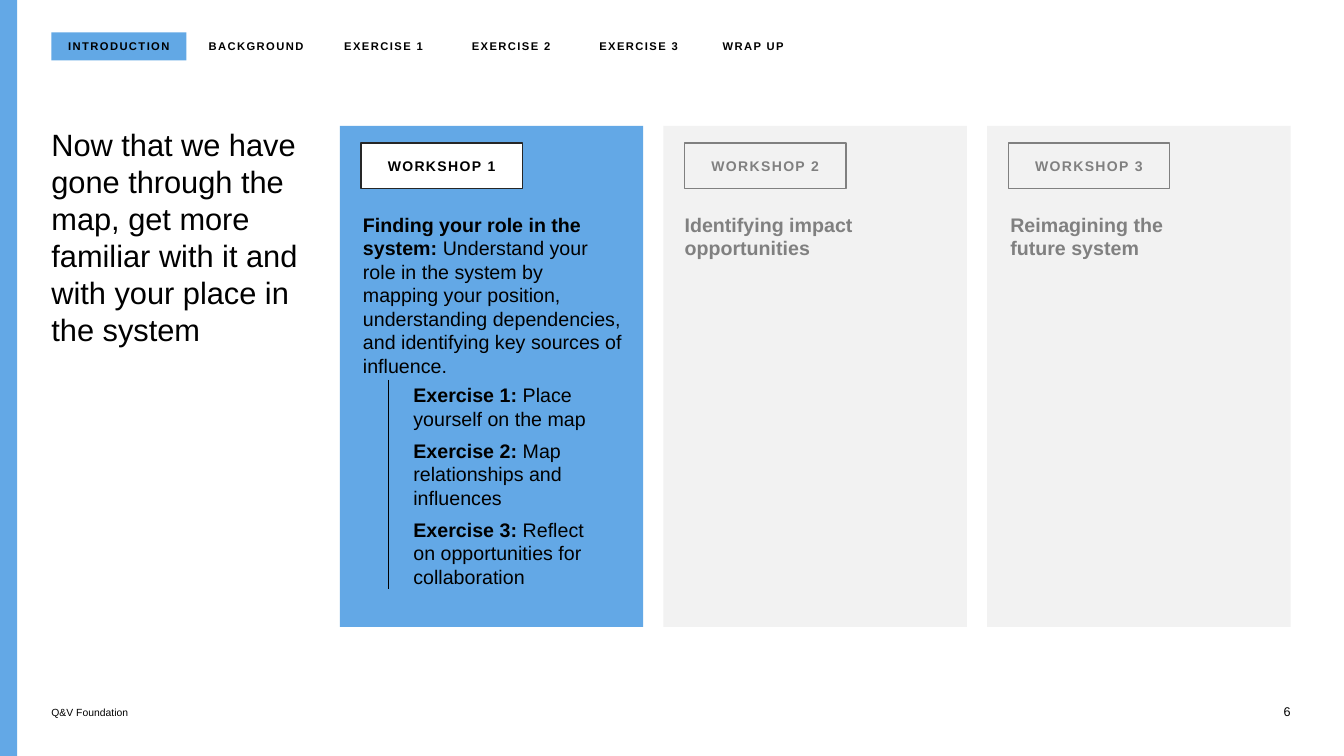
"""Builds the workshop overview slide."""
from dataclasses import dataclass

import lxml.etree
import pptx
import pptx.dml.color
import pptx.enum.shapes
import pptx.enum.text
import pptx.oxml.ns
import pptx.util

PX = 4572
ALIGN = pptx.enum.text.PP_ALIGN
ANCHOR = pptx.enum.text.MSO_ANCHOR
SHAPE = pptx.enum.shapes.MSO_SHAPE
qn = pptx.oxml.ns.qn


@dataclass(frozen=True)
class Theme:
    """Colours and type sizes of the slide."""
    font: str = "Arial"
    blue: str = "63A8E6"
    tab_blue: str = "62A8E5"
    pale: str = "F2F2F2"
    white: str = "FFFFFF"
    black: str = "000000"
    dark: str = "262626"
    grey: str = "808080"
    title: float = 22
    body: float = 14
    badge: float = 10
    page: float = 9
    tab: float = 8
    footer: float = 7.4


THEME = Theme()
TABS = [("INTRODUCTION", 268), ("BACKGROUND", 230), ("EXERCISE 1", 230),
        ("EXERCISE 2", 230), ("EXERCISE 3", 230), ("WRAP UP", 178)]
ROLE = [("Finding your role in the system: ", True),
        ("Understand your role in the system by mapping your position, "
         "understanding dependencies, and identifying key sources of influence.", False)]
WORKSHOPS = [(ROLE, 46, 324),
             ([("Identifying impact opportunities", True)], 42, 154),
             ([("Reimagining the \nfuture system", True)], 46, 154)]
EXERCISES = [[("Exercise 1: ", True), ("Place \nyourself on the map", False)],
             [("Exercise 2: ", True), ("Map relationships and influences", False)],
             [("Exercise 3: ", True),
              ("Reflect \non opportunities for collaboration", False)]]


def px(*lengths):
    """Turn pixel lengths into EMU."""
    return [pptx.util.Emu(length * PX) for length in lengths]


def rgb(code):
    """Return a colour from its hex code."""
    return pptx.dml.color.RGBColor.from_string(code)


def add_run(paragraph, wording, size, color, bold):
    """Add one formatted run, with line breaks where the wording has them."""
    for index, line in enumerate(wording.split("\n")):
        if index:
            paragraph.add_line_break()
        run = paragraph.add_run()
        run.text = line
        run.font.name = THEME.font
        run.font.size = pptx.util.Pt(size)
        run.font.bold = bold
        run.font.color.rgb = rgb(color)


def write(holder, paragraphs, size, color, align=ALIGN.LEFT, anchor=ANCHOR.TOP, gap=0):
    """Fill a shape with paragraphs made of (wording, bold) runs."""
    frame = holder.text_frame
    frame.word_wrap = True
    frame.auto_size = pptx.enum.text.MSO_AUTO_SIZE.NONE
    frame.vertical_anchor = anchor
    frame.margin_left = frame.margin_right = 0
    frame.margin_top = frame.margin_bottom = 0
    for index, runs in enumerate(paragraphs):
        paragraph = frame.add_paragraph() if index else frame.paragraphs[0]
        paragraph.alignment = align
        paragraph.line_spacing = 1.0
        paragraph.space_before = pptx.util.Pt(gap if index else 0)
        for wording, bold in runs:
            add_run(paragraph, wording, size, color, bold)


def place(holder, left, top, width, height):
    """Move and size a placeholder."""
    holder.left, holder.top, holder.width, holder.height = px(left, top, width, height)


def add_block(slide, box, fill=None, line=None, kind=SHAPE.RECTANGLE):
    """Add a flat block with an optional fill and outline."""
    block = slide.shapes.add_shape(kind, *px(*box))
    block.shadow.inherit = False
    if fill:
        block.fill.solid()
        block.fill.fore_color.rgb = rgb(fill)
    else:
        block.fill.background()
    if line:
        block.line.color.rgb = rgb(line)
        block.line.width = pptx.util.Pt(1)
    else:
        block.line.fill.background()
    return block


def add_label(block, wording, size, color):
    """Write a centred, letter-spaced label on a block."""
    write(block, [[(wording, True)]], size, color, ALIGN.CENTER, ANCHOR.MIDDLE)
    for properties in block.element.iter(qn("a:rPr")):
        properties.set("spc", "100")


def add_text(slide, box, runs, size, color, **layout):
    """Add a one-paragraph text box."""
    write(slide.shapes.add_textbox(*px(*box)), [runs], size, color, **layout)


def add_tabs(slide):
    """Add the row of section tabs, the first one active."""
    left = 102
    for index, (section, width) in enumerate(TABS):
        fill = THEME.white if index else THEME.tab_blue
        tab = add_block(slide, (left, 64, width, 56), fill)
        add_label(tab, section, THEME.tab, THEME.black)
        left += width + 23


def add_workshops(slide):
    """Add the three workshop cards, the first one active."""
    for index, (runs, inset, height) in enumerate(WORKSHOPS):
        active = index == 0
        left = 674 + 642 * index
        color = THEME.black if active else THEME.grey
        add_block(slide, (left, 250, 602, 994), THEME.blue if active else THEME.pale)
        badge = add_block(slide, (left + 42, 284, 320, 90),
                          THEME.white if active else None,
                          THEME.dark if active else THEME.grey,
                          SHAPE.ROUNDED_RECTANGLE)
        badge.adjustments[0] = 0
        add_label(badge, f"WORKSHOP {index + 1}", THEME.badge, color)
        add_text(slide, (left + inset, 422, 516, height), runs, THEME.body, color)


def add_exercises(slide, exercises):
    """Set the exercise list in front of its card, with a rule beside it."""
    place(exercises, 820, 760, 392, 414)
    exercises.element.getparent().append(exercises.element)
    write(exercises, EXERCISES, THEME.body, THEME.black, gap=6)
    for properties in exercises.element.iter(qn("a:pPr")):
        properties.set("marL", "0")
        properties.set("indent", "0")
        lxml.etree.SubElement(properties, qn("a:buNone"))
    rule = slide.shapes.add_connector(
        pptx.enum.shapes.MSO_CONNECTOR.STRAIGHT, *px(770, 754, 770, 1168))
    rule.line.color.rgb = rgb(THEME.black)
    rule.line.width = pptx.util.Pt(0.75)
    lxml.etree.SubElement(rule.element.spPr, qn("a:effectLst"))


def main():
    """Build and save the slide."""
    deck = pptx.Presentation()
    deck.slide_width, deck.slide_height = px(2666, 1500)
    slide = deck.slides.add_slide(deck.slide_layouts[1])
    heading, exercises = slide.placeholders
    add_block(slide, (0, 0, 34, 1500), THEME.blue)
    place(heading, 102, 250, 572, 652)
    write(heading, [[("Now that we have gone through the map, get more familiar "
                      "with it and with your place in the system", False)]],
          THEME.title, THEME.black)
    add_tabs(slide)
    add_workshops(slide)
    add_exercises(slide, exercises)
    add_text(slide, (102, 1394, 378, 32), [("Q&V Foundation", False)],
             THEME.footer, THEME.black, anchor=ANCHOR.BOTTOM)
    add_text(slide, (2442, 1394, 118, 32), [("6", False)], THEME.page, THEME.black,
             align=ALIGN.RIGHT, anchor=ANCHOR.BOTTOM)
    deck.save("out.pptx")


if __name__ == "__main__":
    main()
